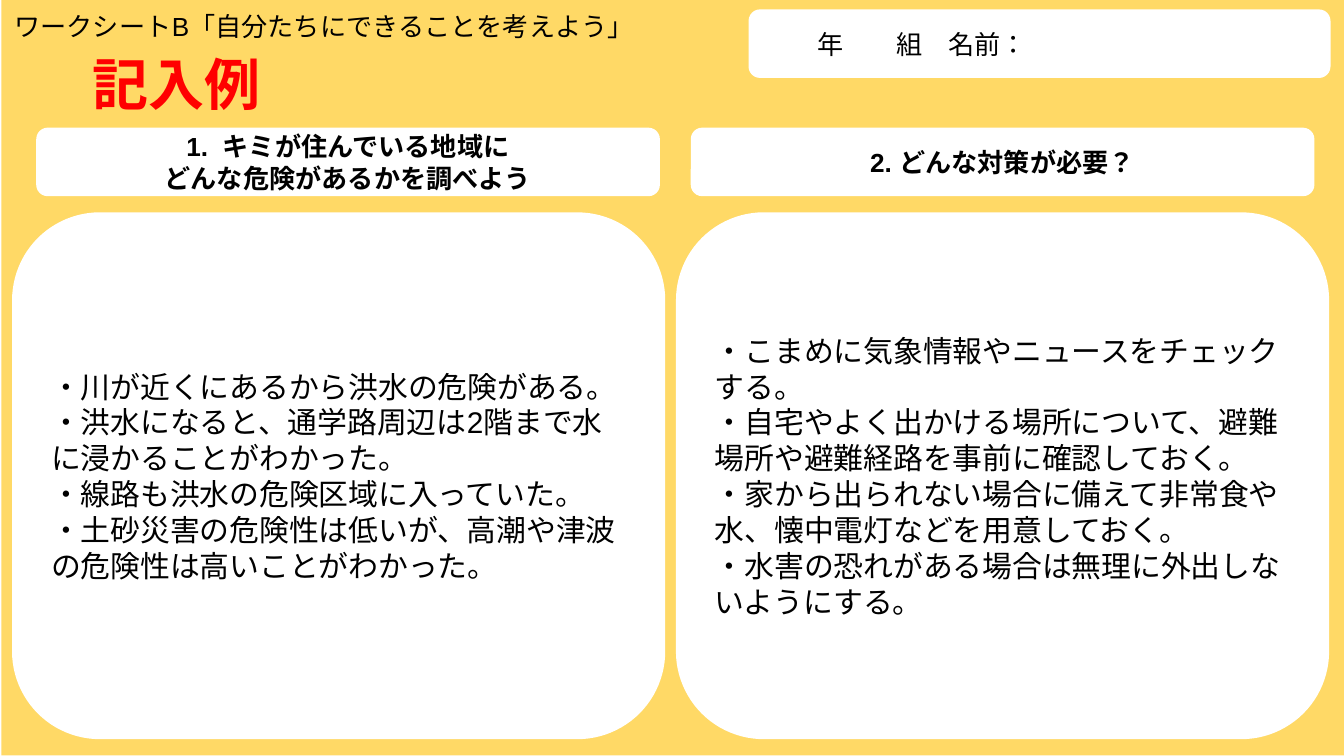
"""Build the filled-in example of worksheet B on disaster preparedness."""
from lxml import etree
from pptx import Presentation
from pptx.dml.color import RGBColor
from pptx.enum.lang import MSO_LANGUAGE_ID
from pptx.enum.shapes import MSO_SHAPE
from pptx.enum.text import MSO_ANCHOR, MSO_AUTO_SIZE, PP_ALIGN
from pptx.oxml.ns import qn
from pptx.util import Inches, Pt

RECT, ROUNDED = MSO_SHAPE.RECTANGLE, MSO_SHAPE.ROUNDED_RECTANGLE
MIDDLE, TOP = MSO_ANCHOR.MIDDLE, MSO_ANCHOR.TOP
LEFT, CENTER = PP_ALIGN.LEFT, PP_ALIGN.CENTER
GROW = MSO_AUTO_SIZE.SHAPE_TO_FIT_TEXT
JAPANESE = MSO_LANGUAGE_ID.JAPANESE
FONT = "Arial"
COLORS = {"yellow": "FFD966", "white": "FFFFFF", "black": "000000", "red": "FF0000"}


def add_box(kind, box, color):
    sp = s.shapes.add_shape(kind, *[Inches(v) for v in box])
    sp.shadow.inherit = False
    sp.fill.solid()
    sp.fill.fore_color.rgb = RGBColor.from_string(COLORS[color])
    sp.line.fill.background()
    return sp


def write(sp, lines, size, align=LEFT, bold=False, color="black", anchor=MIDDLE):
    tf = sp.text_frame
    tf.word_wrap = True
    tf.vertical_anchor = anchor
    tf.margin_left = tf.margin_right = tf.margin_top = tf.margin_bottom = Inches(0.1)
    tf.text = "\n".join(lines)
    for p in tf.paragraphs:
        p.alignment = align
        for r in p.runs:
            r.font.size = Pt(size)
            r.font.bold = bold
            r.font.color.rgb = RGBColor.from_string(COLORS[color])
            r.font.language_id = JAPANESE
            r.font.name = FONT
            for tag in ("a:ea", "a:cs", "a:sym"):
                font = etree.Element(qn(tag), typeface=FONT)
                if tag == "a:sym":
                    r.font._element.find(qn("a:latin")).addprevious(font)
                    r.font._element.find(qn("a:latin")).addnext(font)
                else:
                    r.font._element.append(font)


prs = Presentation()
prs.slide_width, prs.slide_height = Inches(10), Inches(5.625)
s = prs.slides.add_slide(prs.slide_layouts[6])

add_box(RECT, (0.01, 0, 10, 5.62), "yellow")
name_box = add_box(ROUNDED, (5.57, 0.07, 4.33, 0.51), "white")
write(name_box, ["　　年　　組　名前："], 14)

columns = [
    (0.27, 0.09, ["1.  キミが住んでいる地域に", "どんな危険があるかを調べよう"], [
        "・川が近くにあるから洪水の危険がある。",
        "・洪水になると、通学路周辺は2階まで水に浸かることがわかった。",
        "・線路も洪水の危険区域に入っていた。",
        "・土砂災害の危険性は低いが、高潮や津波の危険性は高いことがわかった。",
    ]),
    (5.14, 5.03, ["2. どんな対策が必要？"], [
        "・こまめに気象情報やニュースをチェックする。",
        "・自宅やよく出かける場所について、避難場所や避難経路を事前に確認しておく。",
        "・家から出られない場合に備えて非常食や水、懐中電灯などを用意しておく。",
        "・水害の恐れがある場合は無理に外出しないようにする。",
    ]),
]
for heading_x, answer_x, heading, answers in columns:
    write(add_box(ROUNDED, (heading_x, 0.95, 4.64, 0.51), "white"), heading, 14, CENTER, True)
    write(add_box(ROUNDED, (answer_x, 1.58, 4.86, 3.92), "white"), answers, 16)

titles = [
    ((0.01, -0.02, 5.16, 0.44), "ワークシートB「自分たちにできることを考えよう」", 14, LEFT, False, "black"),
    ((0.09, 0.27, 2.44, 0.71), "記入例", 30, CENTER, True, "red"),
]
for box, text, size, align, bold, color in titles:
    sp = s.shapes.add_textbox(*[Inches(v) for v in box])
    write(sp, [text], size, align, bold, color, TOP)
    sp.text_frame.auto_size = GROW

prs.save("out.pptx")
